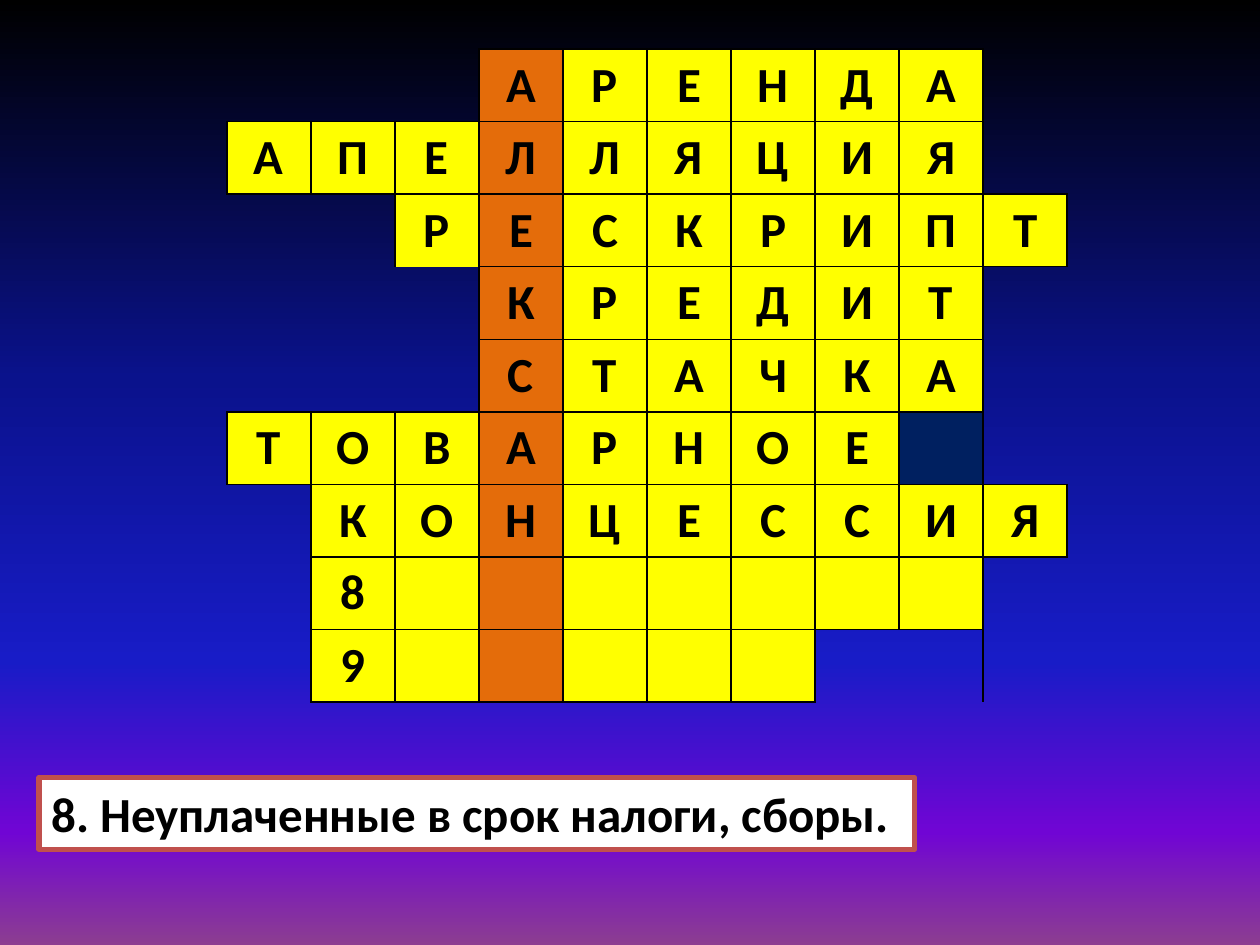
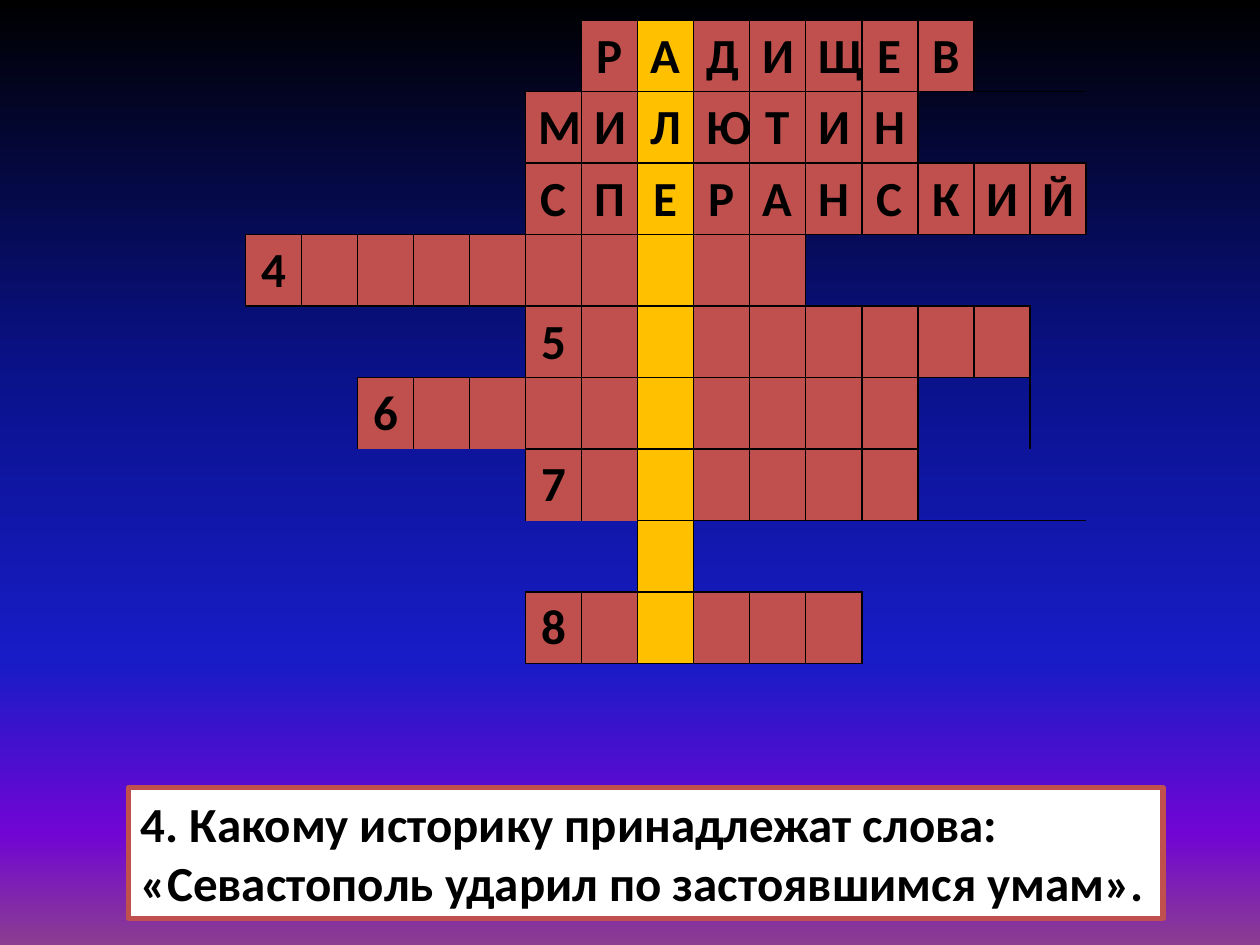
from lxml import etree
from pptx import Presentation
from pptx.dml.color import RGBColor
from pptx.enum.text import MSO_AUTO_SIZE, PP_ALIGN
from pptx.oxml.ns import qn
from pptx.util import Inches, Pt

BLACK = RGBColor(0x00, 0x00, 0x00)
WHITE = RGBColor(0xFF, 0xFF, 0xFF)
YELLOW = RGBColor(0xFF, 0xFF, 0x00)
ORANGE = RGBColor(0xE4, 0x6C, 0x0A)
NAVY = RGBColor(0x00, 0x20, 0x60)
RED = RGBColor(0xC0, 0x50, 0x4D)
AMBER = RGBColor(0xFF, 0xC0, 0x00)
BACKGROUND = [
    (0, BLACK),
    (40, RGBColor(0x0A, 0x12, 0x8C)),
    (70, RGBColor(0x18, 0x1C, 0xC7)),
    (88, RGBColor(0x70, 0x05, 0xD4)),
    (100, RGBColor(0x8C, 0x3D, 0x91)),
]

FONT = {"name": "Calibri", "size": Pt(28), "bold": True}
CENTER = PP_ALIGN.CENTER
FIT_SHAPE = MSO_AUTO_SIZE.SHAPE_TO_FIT_TEXT
PLAIN_TABLE = "{2D5ABB26-0587-4C30-8999-92F81FD0307C}"
BORDER_TAGS = {"l": "a:lnL", "r": "a:lnR", "t": "a:lnT", "b": "a:lnB"}
GRID_WIDTH, GRID_HEIGHT = 6.67, 5.1

# In rows: "." lies outside the words, "_" is a box still to be filled in.
# Each gap is row, column, height, width and the sides that carry a line.
CROSSWORDS = [
    {
        "at": (1.8, 0.39),
        "rows": [
            "...АРЕНДА.",
            "АПЕЛЛЯЦИЯ.",
            "..РЕСКРИПТ",
            "...КРЕДИТ.",
            "...СТАЧКА.",
            "ТОВАРНОЕ..",
            ".КОНЦЕССИЯ",
            ".8_______.",
            ".9_____...",
        ],
        "gaps": [
            (0, 0, 1, 3, "rb"), (0, 9, 2, 1, "lb"), (2, 0, 1, 2, "tr"),
            (3, 0, 2, 3, "rb"), (3, 9, 3, 1, "ltb"), (5, 8, 1, 1, "ltb"),
            (6, 0, 3, 1, "tr"), (7, 9, 2, 1, "lt"), (8, 7, 1, 2, "lt"),
        ],
        "box_color": YELLOW,
        "key_color": ORANGE,
        "key_column": 3,
        "dark_box": (5, 8),
        "clue": ["8. Неуплаченные в срок налоги, сборы."],
        "clue_at": (0.31, 6.17, 6.95, 0.57),
        "clue_wraps": True,
    },
    {
        "at": (1.95, 0.16),
        "rows": [
            "......РАДИЩЕВ..",
            ".....МИЛЮТИН...",
            ".....СПЕРАНСКИЙ",
            "4_________.....",
            ".....5________.",
            "..6_________...",
            ".....7______...",
            "......._.......",
            ".....8_____....",
        ],
        "gaps": [
            (0, 0, 1, 6, "r"), (0, 13, 1, 2, "l"), (1, 0, 2, 5, "rb"),
            (1, 12, 1, 3, "ltb"), (3, 10, 1, 5, "ltb"), (4, 0, 1, 5, "tr"),
            (4, 14, 2, 1, "l"), (5, 0, 1, 2, "r"), (5, 12, 1, 2, "lt"),
            (6, 0, 1, 5, "r"), (6, 12, 1, 3, "l"), (7, 0, 1, 7, "r"),
            (7, 8, 1, 7, "ltb"), (8, 0, 1, 5, "r"), (8, 11, 1, 4, "l"),
        ],
        "box_color": RED,
        "key_color": AMBER,
        "key_column": 7,
        "dark_box": None,
        "clue": ["4. Какому историку принадлежат слова:",
                 "«Севастополь ударил по застоявшимся умам»."],
        "clue_at": (1.02, 6.25, 8.21, 1.04),
        "clue_wraps": False,
    },
]


def set_background(master):
    master.background.fill.gradient()
    grad = master.element.find(".//" + qn("a:gradFill"))
    stops = grad.find(qn("a:gsLst"))
    for gs in list(stops):
        stops.remove(gs)
    for percent, color in BACKGROUND:
        gs = etree.SubElement(stops, qn("a:gs"), pos=str(percent * 1000))
        etree.SubElement(gs, qn("a:srgbClr"), val=str(color))
    grad.find(qn("a:lin")).set("ang", str(90 * 60000))


def write(p, text):
    r = p.add_run()
    r.text = text
    for name, value in FONT.items():
        setattr(r.font, name, value)
    r.font.color.rgb = BLACK


def set_borders(cell, sides):
    """Draw a black line on the named sides and clear the others."""
    tcPr = cell._tc.get_or_add_tcPr()
    for i, (side, tag) in enumerate(BORDER_TAGS.items()):
        ln = etree.Element(qn(tag), w=str(Pt(1)))
        if side in sides:
            fill = etree.SubElement(ln, qn("a:solidFill"))
            etree.SubElement(fill, qn("a:srgbClr"), val=str(BLACK))
        else:
            etree.SubElement(ln, qn("a:noFill"))
        tcPr.insert(i, ln)


def fill_box(cell, color):
    cell.fill.solid()
    cell.fill.fore_color.rgb = color


def add_crossword(s, puzzle):
    rows = puzzle["rows"]
    left, top = puzzle["at"]
    frame = s.shapes.add_table(len(rows), len(rows[0]), Inches(left), Inches(top),
                               Inches(GRID_WIDTH), Inches(GRID_HEIGHT))
    table = frame.table
    table.first_row = table.horz_banding = False
    frame._element.find(".//" + qn("a:tableStyleId")).text = PLAIN_TABLE

    for i, row in enumerate(rows):
        for j, letter in enumerate(row):
            cell = table.cell(i, j)
            p = cell.text_frame.paragraphs[0]
            p.font.size = FONT["size"]
            if letter == ".":
                cell.fill.background()
                continue
            is_key = j == puzzle["key_column"]
            fill_box(cell, puzzle["key_color" if is_key else "box_color"])
            set_borders(cell, "lrtb")
            p.alignment = CENTER
            if letter != "_":
                write(p, letter)

    for i, j, height, width, sides in puzzle["gaps"]:
        cell = table.cell(i, j)
        if height * width > 1:
            cell.merge(table.cell(i + height - 1, j + width - 1))
        set_borders(cell, sides)
    if puzzle["dark_box"]:
        fill_box(table.cell(*puzzle["dark_box"]), NAVY)


def add_clue(s, puzzle):
    sp = s.shapes.add_textbox(*map(Inches, puzzle["clue_at"]))
    sp.fill.solid()
    sp.fill.fore_color.rgb = WHITE
    sp.line.color.rgb = RED
    sp.line.width = Pt(3)
    tf = sp.text_frame
    tf.word_wrap = puzzle["clue_wraps"]
    tf.auto_size = FIT_SHAPE
    for i, line in enumerate(puzzle["clue"]):
        write(tf.add_paragraph() if i else tf.paragraphs[0], line)


def main():
    prs = Presentation()
    prs.slide_width, prs.slide_height = Inches(10), Inches(7.5)
    set_background(prs.slide_master)
    for puzzle in CROSSWORDS:
        s = prs.slides.add_slide(prs.slide_layouts[6])
        add_crossword(s, puzzle)
        add_clue(s, puzzle)
    prs.save("out.pptx")


if __name__ == "__main__":
    main()
